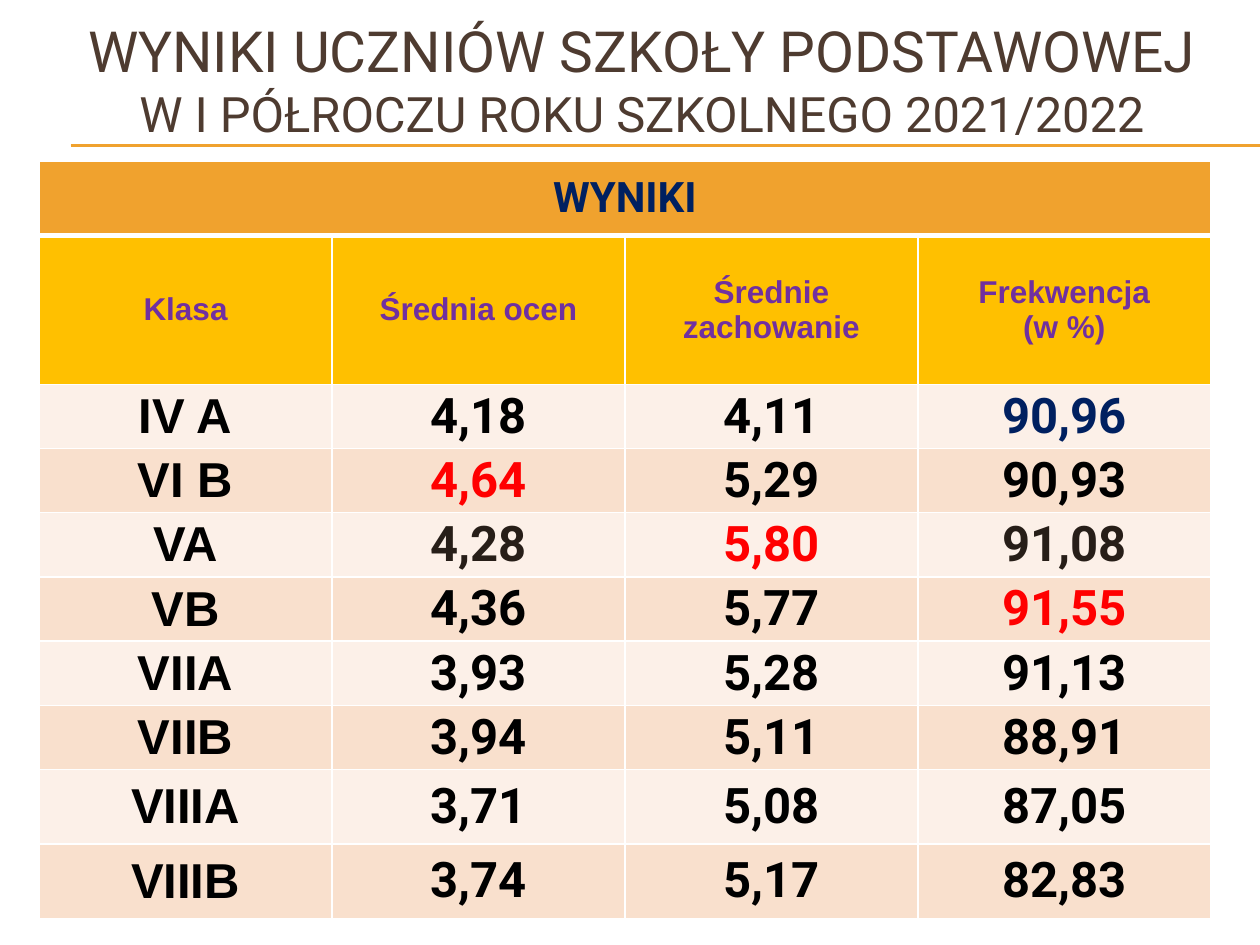
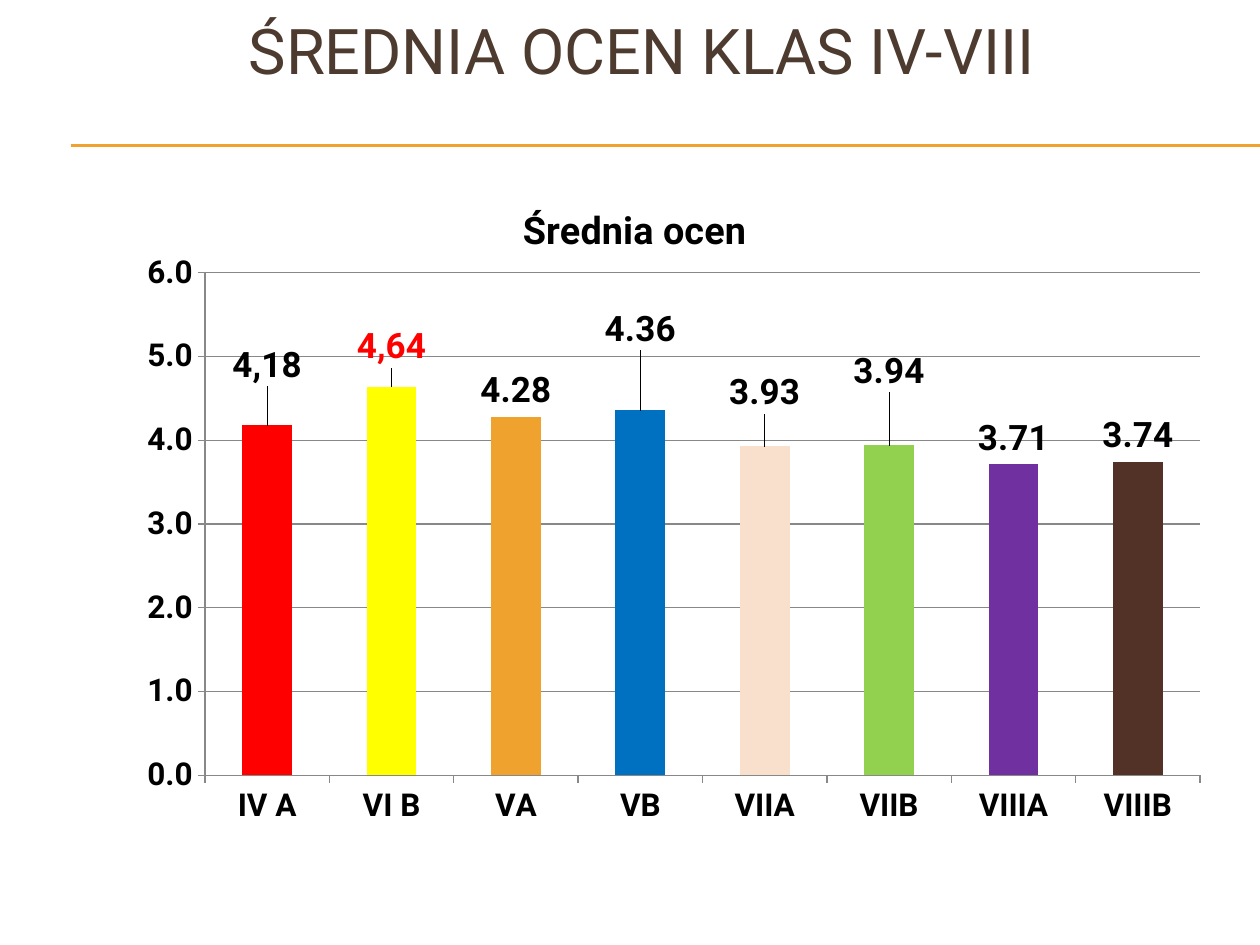
import pptx
import pptx.chart.data
import pptx.dml.color
import pptx.enum.chart
import pptx.enum.shapes
import pptx.enum.text
import pptx.oxml
import pptx.oxml.ns
import pptx.util

ORANGE, BROWN, NAVY, RED = "F0A22E", "4E3B30", "002060", "FF0000"
BLACK, DARK, PURPLE, GOLD, GREY = "000000", "271E18", "7030A0", "FFC000", "888888"
PALE, PEACH = "FCF0E8", "F9E0CD"

HEADINGS = ["Klasa", "Średnia ocen", "Średnie zachowanie", "Frekwencja\n(w %)"]
RESULTS = [
    ("IV A", "4,18", "4,11", "90,96"),
    ("VI B", "4,64", "5,29", "90,93"),
    ("VA", "4,28", "5,80", "91,08"),
    ("VB", "4,36", "5,77", "91,55"),
    ("VIIA", "3,93", "5,28", "91,13"),
    ("VIIB", "3,94", "5,11", "88,91"),
    ("VIIIA", "3,71", "5,08", "87,05"),
    ("VIIIB", "3,74", "5,17", "82,83"),
]
HIGHLIGHTS = {"90,96": NAVY, "4,64": RED, "5,80": RED, "91,55": RED,
              "4,28": DARK, "91,08": DARK}
BAR_COLOURS = [RED, "FFFF00", ORANGE, "0070C0", PEACH, "92D050", PURPLE, "523227"]
LABEL_LIFTS = [0.05, 0.02, 0, 0.08, 0.04, 0.07]
COMMA_LABELS = 2


def colour(value):
    return pptx.dml.color.RGBColor.from_string(value)


class SlideBuilder:
    """Holds the school report style and the current slide on a 100 by 75 grid."""

    columns, rows = 100, 75
    heading_font, label_font = "Roboto", "Arial"

    def __init__(self, deck):
        self.deck = deck
        self.page = None

    def place(self, left, top, width, height):
        across = self.deck.slide_width / self.columns
        down = self.deck.slide_height / self.rows
        return [round(n) for n in (left * across, top * down, width * across, height * down)]

    def start(self):
        self.page = self.deck.slides.add_slide(self.deck.slide_layouts[6])
        for row in (11.5, 11.6):
            self.rule(5.6, row, 100)

    def rule(self, left, row, right):
        start, level, end, _ = self.place(left, row, right, 0)
        line = self.page.shapes.add_connector(
            pptx.enum.shapes.MSO_CONNECTOR.STRAIGHT, start, level, end, level)
        line.line.color.rgb = colour(ORANGE)
        line.line.width = pptx.util.Pt(0.75)
        line.element.spPr.append(pptx.oxml.parse_xml(
            f'<a:effectLst {pptx.oxml.ns.nsdecls("a")}/>'))

    def style(self, font, size, shade, bold=False, name=heading_font):
        font.size = pptx.util.Pt(size)
        font.color.rgb = colour(shade)
        font.bold = bold
        font.name = name

    def add_text(self, para, text, *look):
        para.alignment = pptx.enum.text.PP_ALIGN.CENTER
        for number, part in enumerate(text.split("\n")):
            if number:
                para.add_line_break()
            span = para.add_run()
            span.text = part
            self.style(span.font, *look)

    def title(self, height, *lines):
        box = self.page.shapes.add_textbox(*self.place(5, 0, 91.9, height))
        frame = box.text_frame
        frame.word_wrap = True
        frame.vertical_anchor = pptx.enum.text.MSO_ANCHOR.MIDDLE
        para = frame.paragraphs[0]
        for number, (text, size) in enumerate(lines):
            if number:
                para.add_line_break()
            self.add_text(para, text, size, BROWN)

    def border(self, cell, top, bottom):
        properties = cell._tc.get_or_add_tcPr()
        for position, (side, width) in enumerate(
                [("L", 1), ("R", 1), ("T", top), ("B", bottom)]):
            properties.insert(position, pptx.oxml.parse_xml(
                f'<a:ln{side} {pptx.oxml.ns.nsdecls("a")} w="{pptx.util.Pt(width)}">'
                f'<a:solidFill><a:srgbClr val="FFFFFF"/></a:solidFill></a:ln{side}>'))

    def cell(self, cell, text, fill, look, padding=0.03, top=1, bottom=1):
        cell.fill.solid()
        cell.fill.fore_color.rgb = colour(fill)
        inset = pptx.util.Inches(padding)
        cell.margin_left = cell.margin_right = cell.margin_top = cell.margin_bottom = inset
        cell.vertical_anchor = pptx.enum.text.MSO_ANCHOR.MIDDLE
        if text:
            self.add_text(cell.text_frame.paragraphs[0], text, *look)
        self.border(cell, top, bottom)

    def results_table(self, left, top, width, heights):
        table = self.page.shapes.add_table(
            len(heights), len(HEADINGS), *self.place(left, top, width, sum(heights))).table
        table.first_row = table.horz_banding = False
        for row, height in zip(table.rows, heights):
            row.height = self.place(0, 0, 0, height)[3]
        table.cell(0, 0).merge(table.cell(0, len(HEADINGS) - 1))
        for column, heading in enumerate(HEADINGS):
            self.cell(table.cell(0, column), "" if column else "WYNIKI", ORANGE,
                      (24, NAVY, True), bottom=3)
            self.cell(table.cell(1, column), heading, GOLD,
                      (18, PURPLE, True, self.label_font), top=3)
        for number, result in enumerate(RESULTS):
            fill = PEACH if number % 2 else PALE
            for column, text in enumerate(result):
                name = self.heading_font if column else self.label_font
                look = (28, HIGHLIGHTS.get(text, BLACK), True, name)
                self.cell(table.cell(number + 2, column), text, fill, look,
                          0.01 if column else 0.03)

    def axis(self, axis):
        axis.format.line.color.rgb = colour(GREY)
        axis.major_tick_mark = pptx.enum.chart.XL_TICK_MARK.OUTSIDE
        self.style(axis.tick_labels.font, 18, BLACK, True)

    def layout(self, **shares):
        parts = "".join(f'<c:{key} val="{value}"/>' for key, value in shares.items())
        return pptx.oxml.parse_xml(
            f'<c:layout {pptx.oxml.ns.nsdecls("c")}><c:manualLayout>{parts}'
            '</c:manualLayout></c:layout>')

    def grades_chart(self, left, top, width, height):
        data = pptx.chart.data.CategoryChartData()
        data.categories = [result[0] for result in RESULTS]
        data.add_series(HEADINGS[1], [float(result[1].replace(",", ".")) for result in RESULTS])
        chart = self.page.shapes.add_chart(
            pptx.enum.chart.XL_CHART_TYPE.COLUMN_CLUSTERED,
            *self.place(left, top, width, height), data).chart
        self.style(chart.font, 18, BLACK)
        chart.has_legend = False
        chart.has_title = True
        self.add_text(chart.chart_title.text_frame.paragraphs[0], HEADINGS[1], 21.6, BLACK, True)
        self.axis(chart.category_axis)
        scale = chart.value_axis
        self.axis(scale)
        scale.minimum_scale, scale.maximum_scale, scale.major_unit = 0, 6, 1
        scale.tick_labels.number_format = "#,##0.0"
        scale.tick_labels.number_format_is_linked = False
        scale.major_gridlines.format.line.color.rgb = colour(GREY)
        plot = chart.plots[0]
        plot.gap_width = 150
        plot.vary_by_categories = False
        self.bars(plot.series[0])
        area = chart.element.find(".//" + pptx.oxml.ns.qn("c:plotArea"))
        for old in area.findall(pptx.oxml.ns.qn("c:layout")):
            area.remove(old)
        area.insert(0, self.layout(layoutTarget="inner", xMode="edge", yMode="edge",
                                   x=0.12, y=0.14, w=0.88, h=0.74))
        labels = chart.element.iter(pptx.oxml.ns.qn("c:dLbl"))
        for label, lift in zip(labels, LABEL_LIFTS):
            label.insert(1, self.layout(x=0, y=-lift))

    def bars(self, series):
        above = pptx.enum.chart.XL_LABEL_POSITION.OUTSIDE_END
        labels = series.data_labels
        labels.show_value = True
        labels.position = above
        self.style(labels.font, 20, BLACK, True)
        for number, shade in enumerate(BAR_COLOURS):
            point = series.points[number]
            point.format.fill.solid()
            point.format.fill.fore_color.rgb = colour(shade)
            if number < len(LABEL_LIFTS):
                label = point.data_label
                if number < COMMA_LABELS:
                    text = RESULTS[number][1]
                    self.add_text(label.text_frame.paragraphs[0], text, 20,
                                  HIGHLIGHTS.get(text, BLACK), True)
                else:
                    self.style(label.font, 20, BLACK, True)
                label.position = above


def main():
    deck = pptx.Presentation()
    deck.slide_width, deck.slide_height = pptx.util.Inches(10), pptx.util.Inches(7.5)
    builder = SlideBuilder(deck)

    builder.start()
    builder.results_table(3.1, 12.8, 93, [5.9, 11.8] + [5.1] * 6 + [5.9] * 2)
    builder.title(12.5, ("WYNIKI UCZNIÓW SZKOŁY PODSTAWOWEJ", 32.4),
                  ("W I PÓŁROCZU ROKU SZKOLNEGO 2021/2022", 27.9))

    builder.start()
    builder.title(7.8, ("ŚREDNIA OCEN KLAS IV-VIII", 36))
    builder.grades_chart(5.5, 14.1, 89.8, 53.9)

    deck.save("out.pptx")


if __name__ == "__main__":
    main()
